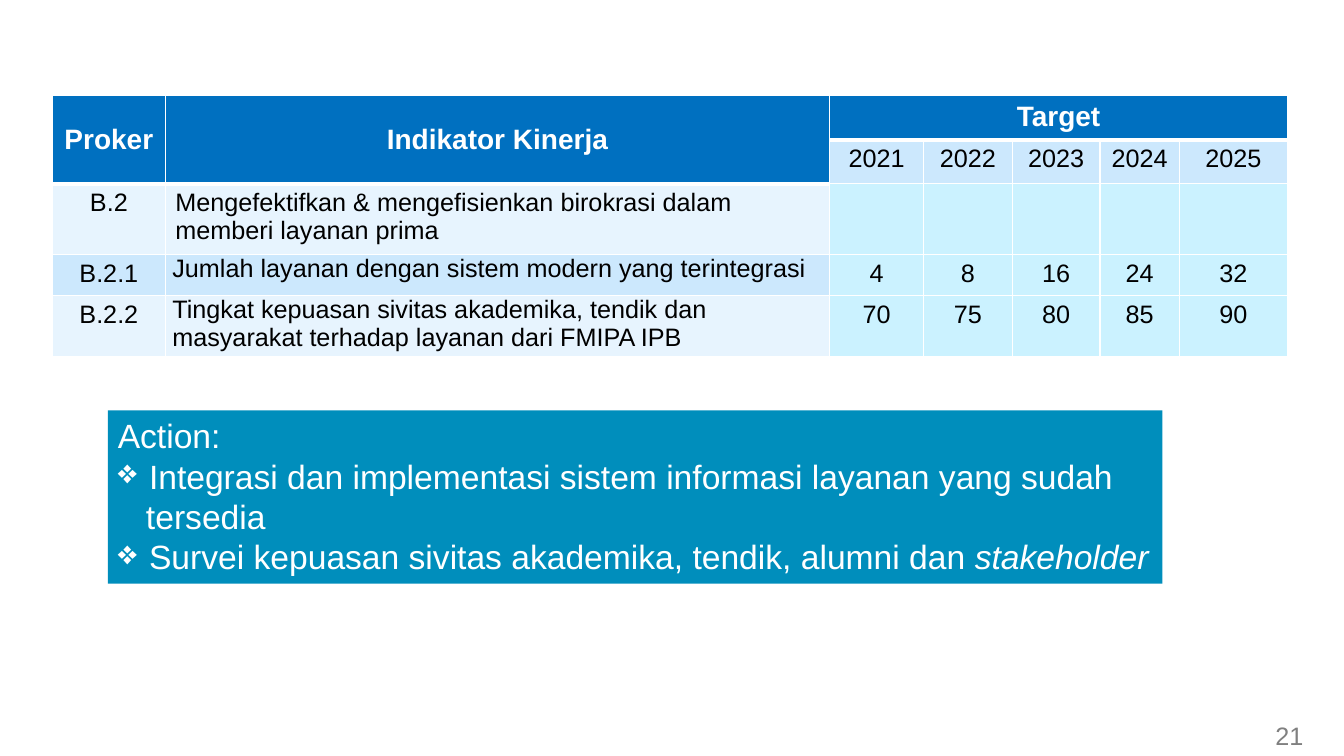
from typing import NamedTuple

import lxml.etree
import pptx
import pptx.dml.color
import pptx.enum.shapes
import pptx.enum.text
import pptx.oxml.ns
import pptx.util

PX = 9144  # EMU, 100 px to the inch
RGB = pptx.dml.color.RGBColor
WHITE = RGB(0xFF, 0xFF, 0xFF)
BLACK = RGB(0x00, 0x00, 0x00)
GRAY = RGB(0x80, 0x80, 0x80)
HEADER_BLUE = RGB(0x00, 0x70, 0xC0)
BAND_DARK = RGB(0xCC, 0xE8, 0xFD)
BAND_LIGHT = RGB(0xE7, 0xF4, 0xFE)
TARGET_CYAN = RGB(0xCB, 0xF2, 0xFF)
ACTION_BLUE = RGB(0x00, 0x8E, 0xBC)

ALIGN = pptx.enum.text.PP_ALIGN
ANCHOR = pptx.enum.text.MSO_ANCHOR
HEADER_FONT = {"name": "Arial", "size": pptx.util.Pt(20), "bold": True}
BODY_FONT = {"name": "Arial", "size": pptx.util.Pt(18), "bold": False}
ACTION_FONT = {"name": "Arial", "size": pptx.util.Pt(24)}

COLUMN_WIDTHS = [112, 659, 93, 88, 87, 79, 107]
ROW_HEIGHTS = [44, 41, 63, 41, 53]
ROWS = [
    ["Proker", "Indikator Kinerja", "Target", "", "", "", ""],
    ["", "", "2021", "2022", "2023", "2024", "2025"],
    ["B.2", "Mengefektifkan & mengefisienkan birokrasi dalam memberi layanan prima",
     "", "", "", "", ""],
    ["B.2.1", "Jumlah layanan dengan sistem modern yang terintegrasi",
     "4", "8", "16", "24", "32"],
    ["B.2.2", "Tingkat kepuasan sivitas akademika, tendik dan masyarakat terhadap "
     "layanan dari FMIPA IPB", "70", "75", "80", "85", "90"],
]


class Box(NamedTuple):
    left: int
    top: int
    width: int
    height: int

    def emu(self) -> list[int]:
        return [v * PX for v in self]


class ActionLine(NamedTuple):
    text: str
    margin: int = 0
    bullet: str = ""
    italic_end: str = ""


ACTION_LINES = [
    ActionLine("Action:"),
    ActionLine("Integrasi dan implementasi sistem informasi layanan yang sudah", 31, "❖"),
    ActionLine("tersedia", 28),
    ActionLine("Survei kepuasan sivitas akademika, tendik, alumni dan ", 31, "❖", "stakeholder"),
]


def add_run(p, text: str, color: RGB, formats: dict) -> None:
    r = p.add_run()
    r.text = text
    r.font.color.rgb = color
    for name, value in formats.items():
        setattr(r.font, name, value)


def add_element(parent, tag: str, **attributes: str):
    return lxml.etree.SubElement(parent, pptx.oxml.ns.qn(tag), attributes)


def set_borders(cell, top: int, bottom: int) -> None:
    """Draw white cell borders, with the top and bottom widths in points."""
    tcPr = cell._tc.get_or_add_tcPr()
    for side, width in {"L": 1, "R": 1, "T": top, "B": bottom}.items():
        ln = add_element(tcPr, f"a:ln{side}", w=str(pptx.util.Pt(width)))
        add_element(add_element(ln, "a:solidFill"), "a:srgbClr", val=str(WHITE))


def is_header(row: int, col: int) -> bool:
    return row == 0 or (row == 1 and col < 2)


def cell_fill(row: int, col: int) -> RGB:
    if is_header(row, col):
        return HEADER_BLUE
    if row > 1 and col > 1:
        return TARGET_CYAN
    return BAND_DARK if row % 2 else BAND_LIGHT


def fill_cell(cell, row: int, col: int) -> None:
    header = is_header(row, col)
    set_borders(cell, 3 if row and is_header(row - 1, col) else 1, 3 if header else 1)
    cell.fill.solid()
    cell.fill.fore_color.rgb = cell_fill(row, col)
    tight = col == 1 and row > 2
    side, edge = (7, 0) if tight else (10, 5)
    cell.margin_left = cell.margin_right = side * PX
    cell.margin_top = cell.margin_bottom = edge * PX
    cell.vertical_anchor = ANCHOR.MIDDLE if header and col < 2 else ANCHOR.TOP
    p = cell.text_frame.paragraphs[0]
    if col == 1 and not header:
        p.space_after = pptx.util.Pt(6)
    else:
        p.alignment = ALIGN.CENTER
    if ROWS[row][col]:
        add_run(p, ROWS[row][col], WHITE if header else BLACK,
                HEADER_FONT if header else BODY_FONT)


def add_target_table(s) -> None:
    box = Box(52, 95, sum(COLUMN_WIDTHS), sum(ROW_HEIGHTS))
    table = s.shapes.add_table(len(ROWS), len(COLUMN_WIDTHS), *box.emu()).table
    table.first_row = table.horz_banding = False
    for column, width in zip(table.columns, COLUMN_WIDTHS):
        column.width = width * PX
    for table_row, height in zip(table.rows, ROW_HEIGHTS):
        table_row.height = height * PX
    for row in range(len(ROWS)):
        for col in range(len(COLUMN_WIDTHS)):
            fill_cell(table.cell(row, col), row, col)
    for col in (0, 1):
        table.cell(0, col).merge(table.cell(1, col))
    table.cell(0, 2).merge(table.cell(0, 6))


def add_action_box(s) -> None:
    sp = s.shapes.add_shape(pptx.enum.shapes.MSO_SHAPE.RECTANGLE,
                            *Box(107, 407, 1046, 172).emu())
    sp.shadow.inherit = False
    sp.fill.solid()
    sp.fill.fore_color.rgb = ACTION_BLUE
    sp.line.fill.background()
    tf = sp.text_frame
    tf.word_wrap = False
    tf.auto_size = pptx.enum.text.MSO_AUTO_SIZE.SHAPE_TO_FIT_TEXT
    tf.vertical_anchor = ANCHOR.TOP
    for i, line in enumerate(ACTION_LINES):
        p = tf.add_paragraph() if i else tf.paragraphs[0]
        p.alignment = ALIGN.LEFT
        pPr = p._p.get_or_add_pPr()
        pPr.set("marL", str(line.margin * PX))
        if line.bullet:
            pPr.set("indent", str(-line.margin * PX))
            add_element(pPr, "a:buChar", char=line.bullet)
        add_run(p, line.text, WHITE, ACTION_FONT)
        if line.italic_end:
            add_run(p, line.italic_end, WHITE, ACTION_FONT | {"italic": True})


def add_page_number(s) -> None:
    tf = s.shapes.add_textbox(*Box(1255, 710, 55, 40).emu()).text_frame
    tf.word_wrap = True
    add_run(tf.paragraphs[0], "21", GRAY, BODY_FONT)


def main() -> None:
    prs = pptx.Presentation()
    prs.slide_width, prs.slide_height = 1333 * PX, 750 * PX
    s = prs.slides.add_slide(prs.slide_layouts[6])
    add_action_box(s)
    add_target_table(s)
    add_page_number(s)
    prs.save("out.pptx")


if __name__ == "__main__":
    main()
